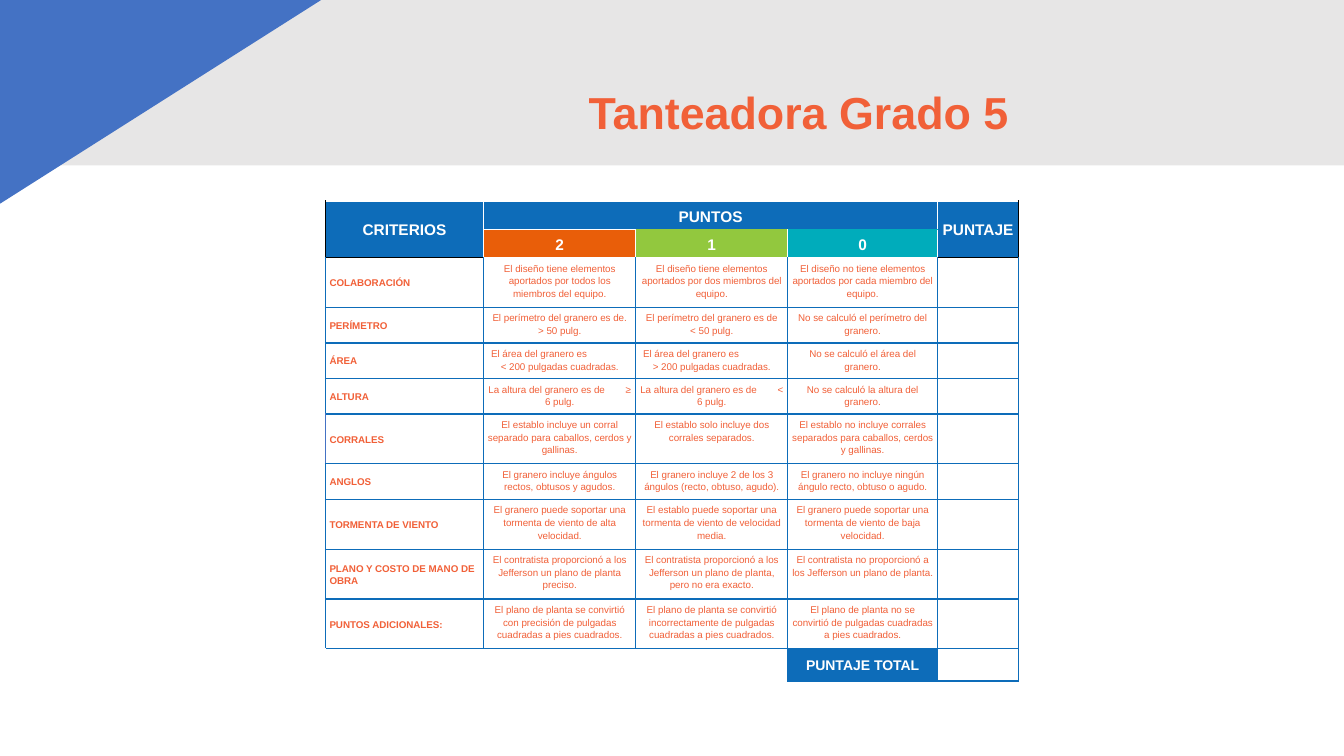
import pptx
import pptx.util
import pptx.dml.color
import pptx.enum.shapes
import pptx.enum.text
import pptx.oxml.ns
from lxml import etree
from dataclasses import dataclass

Pt = pptx.util.Pt
qn = pptx.oxml.ns.qn
Align = pptx.enum.text.PP_ALIGN
Anchor = pptx.enum.text.MSO_ANCHOR
Form = pptx.enum.shapes.MSO_SHAPE


@dataclass(frozen=True)
class Theme:
    font: str = "Arial"
    coral: str = "F16038"
    blue: str = "0D6CB9"
    orange: str = "E95E09"
    green: str = "92C83E"
    teal: str = "00ACBB"
    sky: str = "4472C4"
    gray: str = "E7E6E6"
    white: str = "FFFFFF"
    black: str = "000000"
    title: int = 32
    head: int = 11
    total: int = 10
    body: int = 7


THEME = Theme()
COLS = [113, 108.6, 108.6, 107, 58]
TALL, SHORT = 35.6, 25.4
TOP_ROWS = [20.6, 19.6]
LAST_ROW = 23
TAB = 98
SCORES = [("2", THEME.orange), ("1", THEME.green), ("0", THEME.teal)]
RULES = [
    (TALL, "COLABORACIÓN",
     "El diseño tiene elementos aportados por todos los miembros del equipo.",
     "El diseño tiene elementos aportados por dos miembros del equipo.",
     "El diseño no tiene elementos aportados por cada miembro del equipo."),
    (SHORT, "PERÍMETRO",
     "El perímetro del granero es de.\v> 50 pulg.",
     "El perímetro del granero es de\v< 50 pulg.",
     "No se calculó el perímetro del granero."),
    (SHORT, "ÁREA",
     "El área del granero es\t\v< 200 pulgadas cuadradas.",
     "El área del granero es\t\v> 200 pulgadas cuadradas.",
     "No se calculó el área del granero."),
    (SHORT, "ALTURA",
     "La altura del granero es de\t≥\v6 pulg.",
     "La altura del granero es de\t<\v6 pulg.",
     "No se calculó la altura del granero."),
    (TALL, "CORRALES",
     "El establo incluye un corral separado para caballos, cerdos y gallinas.",
     "El establo solo incluye dos corrales separados.",
     "El establo no incluye corrales separados para caballos, cerdos y gallinas."),
    (SHORT, "ANGLOS",
     "El granero incluye ángulos rectos, obtusos y agudos.",
     "El granero incluye 2 de los 3 ángulos (recto, obtuso, agudo).",
     "El granero no incluye ningún ángulo recto, obtuso o agudo."),
    (TALL, "TORMENTA DE VIENTO",
     "El granero puede soportar una tormenta de viento de alta velocidad.",
     "El establo puede soportar una tormenta de viento de velocidad media.",
     "El granero puede soportar una tormenta de viento de baja velocidad."),
    (TALL, "PLANO Y COSTO DE MANO DE OBRA",
     "El contratista proporcionó a los Jefferson un plano de planta preciso.",
     "El contratista proporcionó a los Jefferson un plano de planta, pero no era exacto.",
     "El contratista no proporcionó a los Jefferson un plano de planta."),
    (TALL, "PUNTOS ADICIONALES:",
     "El plano de planta se convirtió con precisión de pulgadas cuadradas a pies cuadrados.",
     "El plano de planta se convirtió incorrectamente de pulgadas cuadradas a pies cuadrados.",
     "El plano de planta no se convirtió de pulgadas cuadradas a pies cuadrados."),
]


def apply(target, values):
    for name, value in values.items():
        setattr(target, name, value)


def style(run, size, color, bold):
    apply(run.font, {"name": THEME.font, "size": Pt(size), "bold": bold})
    run.font.color.rgb = pptx.dml.color.RGBColor.from_string(color)


def paint(fill, color):
    fill.solid()
    fill.fore_color.rgb = pptx.dml.color.RGBColor.from_string(color)


def add_block(slide, form, width, height, color):
    shape = slide.shapes.add_shape(form, 0, 0, Pt(width), Pt(height))
    shape.shadow.inherit = False
    paint(shape.fill, color)
    shape.line.fill.background()
    return shape


def set_title(slide, text):
    title = slide.shapes.title
    apply(title, {"left": Pt(29.5), "top": Pt(30.2),
                  "width": Pt(698.4), "height": Pt(104.4)})
    frame = title.text_frame
    frame.text = text
    apply(frame, {"vertical_anchor": Anchor.MIDDLE, "word_wrap": True,
                  "auto_size": pptx.enum.text.MSO_AUTO_SIZE.NONE})
    para = frame.paragraphs[0]
    apply(para, {"alignment": Align.RIGHT, "line_spacing": 0.9})
    style(para.runs[0], THEME.title, THEME.coral, True)
    slide.shapes.element.append(title.element)


def set_edges(cell, left, right, top, bottom):
    props = cell._tc.get_or_add_tcPr()
    for side, color in zip("LRTB", (left, right, top, bottom)):
        line = etree.SubElement(props, qn(f"a:ln{side}"), w=str(Pt(1)))
        fill = etree.SubElement(line, qn("a:solidFill"))
        etree.SubElement(fill, qn("a:srgbClr"), val=color)


def set_cell(cell, text="", size=THEME.body, color=THEME.coral, bold=False,
             align=Align.CENTER, anchor=Anchor.TOP, fill=None,
             edges=(THEME.blue,) * 4):
    set_edges(cell, *edges)
    if fill:
        paint(cell.fill, fill)
    else:
        cell.fill.background()
    margins = ("margin_left", "margin_right", "margin_top", "margin_bottom")
    apply(cell, dict.fromkeys(margins, Pt(2.88)))
    cell.vertical_anchor = anchor
    cell.text_frame.text = text
    para = cell.text_frame.paragraphs[0]
    apply(para, {"alignment": align, "line_spacing": 1.15})
    if "\t" in text:
        tabs = etree.SubElement(para._p.get_or_add_pPr(), qn("a:tabLst"))
        etree.SubElement(tabs, qn("a:tab"), pos=str(Pt(TAB)), algn="l")
    for run in para.runs:
        style(run, size, color, bold)
    for mark in para._p.findall(qn("a:br")):
        etree.SubElement(mark, qn("a:rPr"), sz=str(size * 100))
    if not text:
        etree.SubElement(para._p, qn("a:endParaRPr"), sz=str(size * 100))


def fill_head(table):
    white, black = THEME.white, THEME.black
    look = {"size": THEME.head, "color": white, "bold": True}
    mid = {"anchor": Anchor.MIDDLE, "fill": THEME.blue}
    sides = [(0, "CRITERIOS", (black, white, white, black)),
             (4, "PUNTAJE", (white, black, white, black))]
    for col, text, edges in sides:
        set_cell(table.cell(0, col), text, edges=edges, **look, **mid)
        set_cell(table.cell(1, col), edges=edges, fill=THEME.blue)
        table.cell(0, col).merge(table.cell(1, col))
    for col, (text, color) in enumerate(SCORES, 1):
        set_cell(table.cell(0, col), "PUNTOS" if col == 1 else "",
                 edges=(white,) * 4, **look, **mid)
        top = white if col == 1 else color
        set_cell(table.cell(1, col), text, fill=color,
                 edges=(white, white, top, white), **look)
    table.cell(0, 1).merge(table.cell(0, 3))


def fill_rules(table):
    blue = THEME.blue
    for row, (_, name, *notes) in enumerate(RULES, 2):
        fill = THEME.white if row < 6 else None
        left = THEME.sky if name == "CORRALES" else blue
        top = THEME.black if row == 2 else blue
        set_cell(table.cell(row, 0), name, bold=True, align=Align.LEFT,
                 anchor=Anchor.MIDDLE, fill=fill, edges=(left, blue, top, blue))
        for col, note in enumerate(notes, 1):
            above = THEME.white if row == 2 else blue
            set_cell(table.cell(row, col), note, fill=fill,
                     edges=(blue, blue, above, blue))
        set_cell(table.cell(row, 4), fill=fill, edges=(blue, blue, top, blue))


def fill_total(table):
    row = len(table.rows) - 1
    for col in range(3):
        set_cell(table.cell(row, col),
                 edges=(THEME.white, THEME.blue, THEME.blue, THEME.white))
    table.cell(row, 0).merge(table.cell(row, 2))
    set_cell(table.cell(row, 3), "PUNTAJE TOTAL", THEME.total, THEME.white,
             True, anchor=Anchor.MIDDLE, fill=THEME.blue)
    set_cell(table.cell(row, 4))


def add_rubric(slide):
    rows = TOP_ROWS + [rule[0] for rule in RULES] + [LAST_ROW]
    table = slide.shapes.add_table(len(rows), len(COLS), Pt(232.5), Pt(143.6),
                                   Pt(sum(COLS)), Pt(sum(rows))).table
    apply(table, {"first_row": False, "horz_banding": False})
    for col, width in zip(table.columns, COLS):
        col.width = Pt(width)
    for row, height in zip(table.rows, rows):
        row.height = Pt(height)
    fill_head(table)
    fill_rules(table)
    fill_total(table)


def main():
    deck = pptx.Presentation()
    apply(deck, {"slide_width": Pt(960), "slide_height": Pt(540)})
    slide = deck.slides.add_slide(deck.slide_layouts[5])
    add_block(slide, Form.RECTANGLE, 960, 118.2, THEME.gray)
    wedge = add_block(slide, Form.RIGHT_TRIANGLE, 229.5, 145.6, THEME.sky)
    wedge.element.spPr.xfrm.set("flipV", "1")
    set_title(slide, "Tanteadora Grado 5")
    add_rubric(slide)
    deck.save("out.pptx")


if __name__ == "__main__":
    main()
